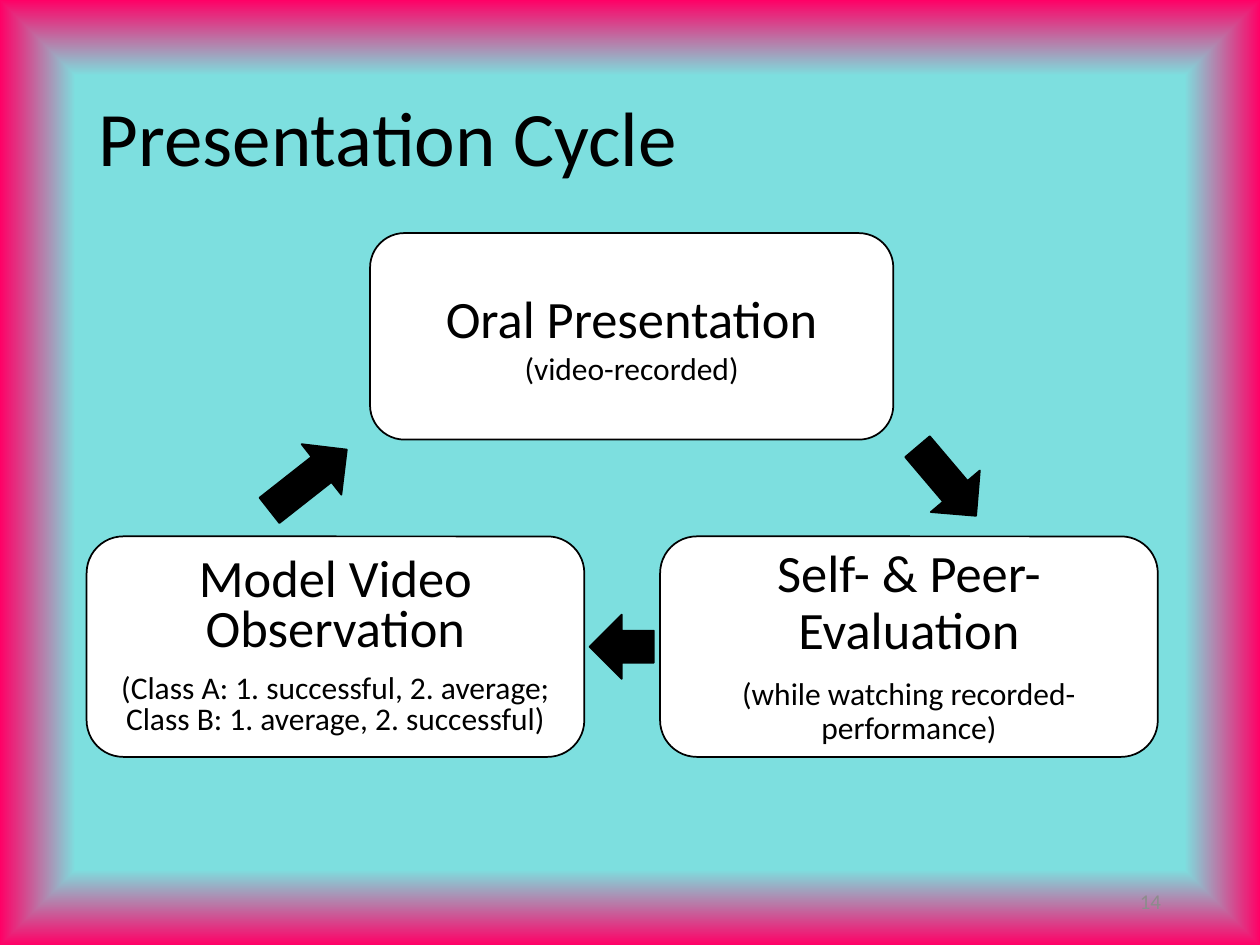
import pptx
import pptx.dml.color
import pptx.enum.shapes
import pptx.enum.text
import pptx.oxml
import pptx.oxml.ns
import pptx.util
from dataclasses import dataclass

Pt = pptx.util.Pt
RGB = pptx.dml.color.RGBColor
Align = pptx.enum.text.PP_ALIGN
Shape = pptx.enum.shapes.MSO_SHAPE


@dataclass(frozen=True)
class Theme:
    font: str = "Calibri"
    black: RGB = RGB(0, 0, 0)
    white: RGB = RGB(255, 255, 255)
    gray: RGB = RGB(0x8C, 0x8C, 0x8C)
    teal: RGB = RGB(0x7D, 0xDF, 0xDF)
    pink: RGB = RGB(0xFF, 0x00, 0x66)
    title_size: int = 44
    step_size: int = 30
    detail_size: int = 18
    number_size: int = 12
    line_width: int = 1


THEME = Theme()


def points(*lengths):
    return [Pt(length) for length in lengths]


def set_background(slide):
    """Plain centre that fades into a coloured frame at the slide edges."""
    fill = slide.background.fill
    fill.gradient()
    stops = zip(fill.gradient_stops, (0.84, 1), (THEME.teal, THEME.pink))
    for stop, position, color in stops:
        stop.position = position
        stop.color.rgb = color
    qn = pptx.oxml.ns.qn
    gradient = slide.background._cSld.find(".//" + qn("a:gradFill"))
    linear = gradient.find(qn("a:lin"))
    gradient.replace(linear, pptx.oxml.parse_xml(
        f'<a:path {pptx.oxml.ns.nsdecls("a")} path="shape">'
        '<a:fillToRect l="50000" t="50000" r="50000" b="50000"/></a:path>'))


def write(shape, lines, align, color=THEME.black, spacing=None, before=0):
    """Fill a shape with (text, size) paragraphs."""
    frame = shape.text_frame
    frame.word_wrap = True
    frame.vertical_anchor = pptx.enum.text.MSO_ANCHOR.MIDDLE
    frame.text = "\n".join(text for text, size in lines)
    for paragraph, (text, size) in zip(frame.paragraphs, lines):
        paragraph.alignment = align
        paragraph.line_spacing = spacing
        paragraph.space_before = Pt(before)
        font = paragraph.runs[0].font
        font.name, font.size, font.color.rgb = THEME.font, Pt(size), color


def add_text(slide, box, text, size, align, **style):
    write(slide.shapes.add_textbox(*points(*box)), [(text, size)], align, **style)


def add_outlined(slide, kind, box, color):
    shape = slide.shapes.add_shape(kind, *points(*box))
    shape.shadow.inherit = False
    shape.fill.solid()
    shape.fill.fore_color.rgb = color
    shape.line.color.rgb = THEME.black
    shape.line.width = Pt(THEME.line_width)
    return shape


def add_step(slide, box, name, detail, **style):
    shape = add_outlined(slide, Shape.ROUNDED_RECTANGLE, box, THEME.white)
    lines = [(name, THEME.step_size), (detail, THEME.detail_size)]
    write(shape, lines, Align.CENTER, **style)
    return shape


def add_arrow(slide, box, rotation):
    add_outlined(slide, Shape.DOWN_ARROW, box, THEME.black).rotation = rotation


def main():
    presentation = pptx.Presentation()
    presentation.slide_width, presentation.slide_height = points(720, 540)
    slide = presentation.slides.add_slide(presentation.slide_layouts[6])
    set_background(slide)

    add_text(slide, (49.5, 28.75, 621, 104.4), "Presentation Cycle",
             THEME.title_size, Align.LEFT, spacing=0.9)
    add_text(slide, (508.5, 500.5, 162, 28.75), "14",
             THEME.number_size, Align.RIGHT, color=THEME.gray)

    lower_top, lower_width, lower_height = 306.5, 284.4, 126
    add_step(slide, (211.5, 133.2, 299, 118), "Oral Presentation", "(video-recorded)")
    evaluation = add_step(
        slide, (377.2, lower_top, lower_width, lower_height),
        "Self- & Peer- Evaluation", "(while watching recorded-performance)",
        spacing=0.9, before=10)
    frame = evaluation.text_frame
    frame.margin_left = frame.margin_right = Pt(5)
    frame.margin_top = frame.margin_bottom = Pt(3)
    add_step(
        slide, (49.5, lower_top, lower_width, lower_height),
        "Model Video Observation",
        "(Class A: 1. successful, 2. average; Class B: 1. average, 2. successful)",
        spacing=0.8, before=10)

    add_arrow(slide, (522.7, 249.1, 36.7, 51.8), 319.7)
    add_arrow(slide, (336.9, 351.2, 36.7, 36.7), 90)
    add_arrow(slide, (157.7, 246.2, 36.7, 56.2), 231.8)

    presentation.save("out.pptx")


if __name__ == "__main__":
    main()
